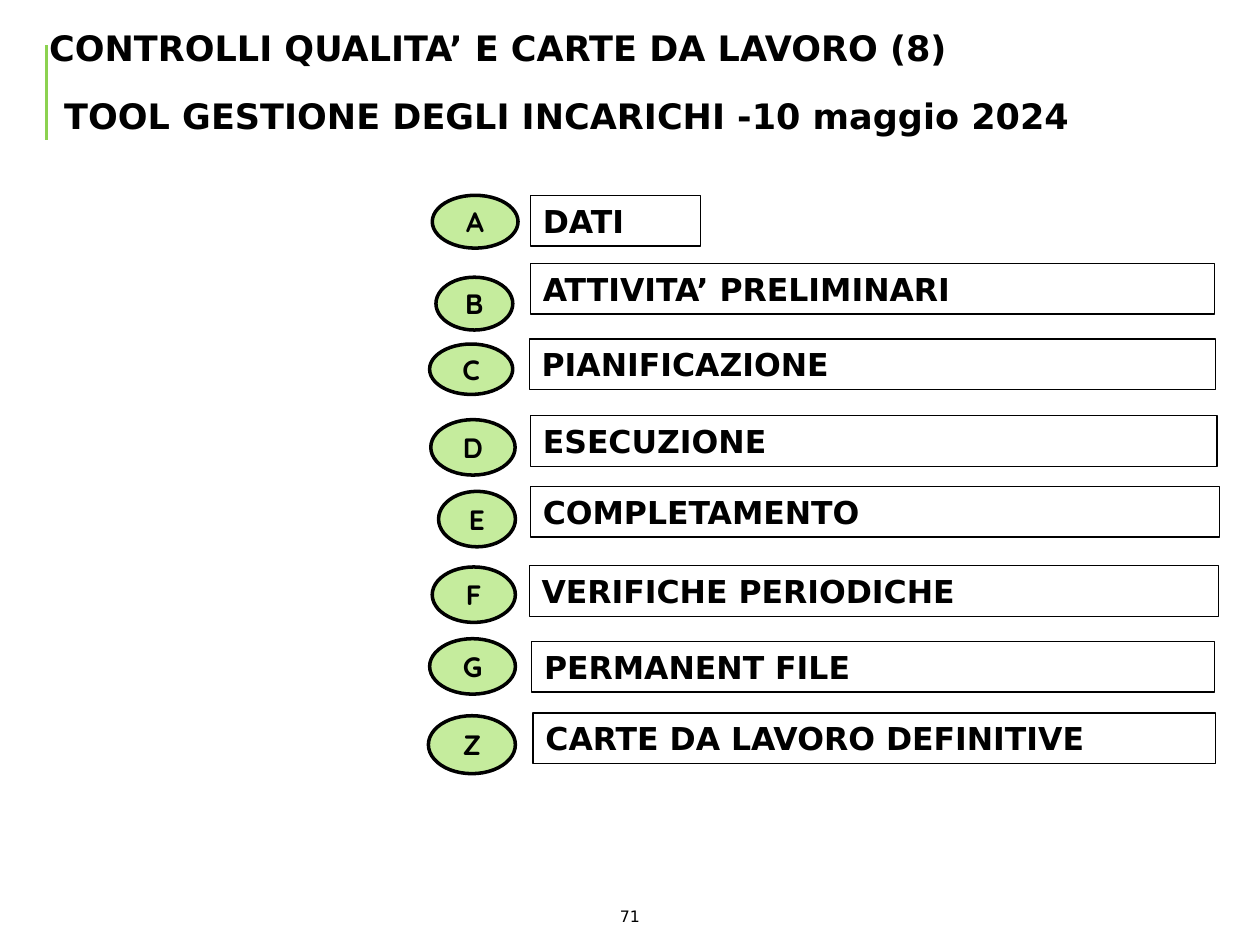
from dataclasses import dataclass
from typing import Any

from pptx import Presentation
from pptx.dml.color import RGBColor
from pptx.enum.shapes import MSO_CONNECTOR, MSO_SHAPE
from pptx.enum.text import MSO_ANCHOR, MSO_AUTO_SIZE, PP_ALIGN
from pptx.oxml.ns import qn
from pptx.util import Pt
from lxml.etree import SubElement

COLORS = {"text": "000000", "outline": "000000", "badge": "C5EC9D", "accent": "8CD250"}

# letter, badge (left, top, width, height), label, label box (left, top, width)
SECTIONS = [
    ("A", (247, 111.6, 49, 30.2), "DATI", (303.1, 111.6, 97.2)),
    ("B", (249.1, 158.4, 43.9, 30.2), "ATTIVITA’ PRELIMINARI", (303.1, 150.5, 391)),
    ("C", (245.5, 196.6, 47.5, 28.8), "PIANIFICAZIONE", (302.4, 193.7, 392.4)),
    ("D", (246.2, 239.8, 48.2, 31.7), "ESECUZIONE", (303.1, 237.6, 392.4)),
    ("E", (250.6, 280.8, 43.9, 31.7), "COMPLETAMENTO", (303.1, 277.9, 393.8)),
    ("F", (247, 324, 47.5, 31.7), "VERIFICHE PERIODICHE", (302.4, 323.3, 393.8)),
    ("G", (245.5, 365, 49, 31.7), "PERMANENT FILE", (303.8, 366.5, 390.2)),
    ("Z", (244.8, 409, 49.7, 33.1), "CARTE DA LAVORO DEFINITIVE", (304.6, 407.5, 390.2)),
]
LABEL_HEIGHT = 29


def color(name):
    return RGBColor.from_string(COLORS[name])


@dataclass
class SlideBuilder:
    slide: Any
    body_font: str = "DejaVu Sans"
    badge_font: str = "Quicksand"
    heading_size: float = 20

    def fill_text(self, shape, text, size, font=None, bold=True, align=PP_ALIGN.LEFT,
                  anchor=MSO_ANCHOR.MIDDLE, inset=None):
        frame = shape.text_frame
        frame.word_wrap = True
        frame.auto_size = MSO_AUTO_SIZE.NONE
        frame.vertical_anchor = anchor
        if inset is not None:
            frame.margin_left = frame.margin_right = Pt(inset)
            frame.margin_top = frame.margin_bottom = Pt(inset)
        para = frame.paragraphs[0]
        para.alignment = align
        span = para.add_run()
        span.text = text
        span.font.name = font or self.body_font
        span.font.size = Pt(size)
        span.font.bold = bold
        span.font.color.rgb = color("text")

    def title(self, text, left, top, width, height):
        title = self.slide.shapes.title
        title.left, title.top, title.width, title.height = map(Pt, (left, top, width, height))
        self.fill_text(title, text, self.heading_size, inset=0)

    def text(self, text, area, size, **style):
        box = self.slide.shapes.add_textbox(*map(Pt, area))
        self.fill_text(box, text, size, **style)

    def shape(self, kind, area, line_width, fill=None):
        shape = self.slide.shapes.add_shape(kind, *map(Pt, area))
        shape.shadow.inherit = False
        if fill:
            shape.fill.solid()
            shape.fill.fore_color.rgb = color(fill)
        else:
            shape.fill.background()
        shape.line.color.rgb = color("outline")
        shape.line.width = Pt(line_width)
        return shape

    def badge(self, letter, area):
        oval = self.shape(MSO_SHAPE.OVAL, area, 2, "badge")
        self.fill_text(oval, letter, 16, font=self.badge_font, align=PP_ALIGN.CENTER)

    def label(self, text, area):
        box = self.shape(MSO_SHAPE.RECTANGLE, area, 0.75)
        self.fill_text(box, text, 18, align=PP_ALIGN.JUSTIFY, anchor=MSO_ANCHOR.TOP)

    def line(self, *ends):
        line = self.slide.shapes.add_connector(MSO_CONNECTOR.STRAIGHT, *map(Pt, ends))
        line.line.color.rgb = color("accent")
        line.line.width = Pt(1.5)
        SubElement(line._element.spPr, qn("a:effectLst"))


def main():
    deck = Presentation()
    deck.slide_width, deck.slide_height = Pt(720), Pt(540)
    page = SlideBuilder(deck.slides.add_slide(deck.slide_layouts[5]))

    page.line(26.6, 25.9, 26.6, 79.9)
    page.text("CONTROLLI QUALITA’ E CARTE DA LAVORO (8)", (28.1, 15.1, 623.5, 24.5),
              page.heading_size, inset=0)
    page.title("TOOL GESTIONE DEGLI INCARICHI -10 maggio 2024", 36.7, 54, 623.5, 24.5)
    for letter, badge_area, label, label_area in SECTIONS:
        page.badge(letter, badge_area)
        page.label(label, (*label_area, LABEL_HEIGHT))
    page.text("71", (339.8, 514.8, 40.3, 14.4), 9, bold=False,
              align=PP_ALIGN.CENTER, anchor=MSO_ANCHOR.TOP)

    deck.save("out.pptx")


if __name__ == "__main__":
    main()
